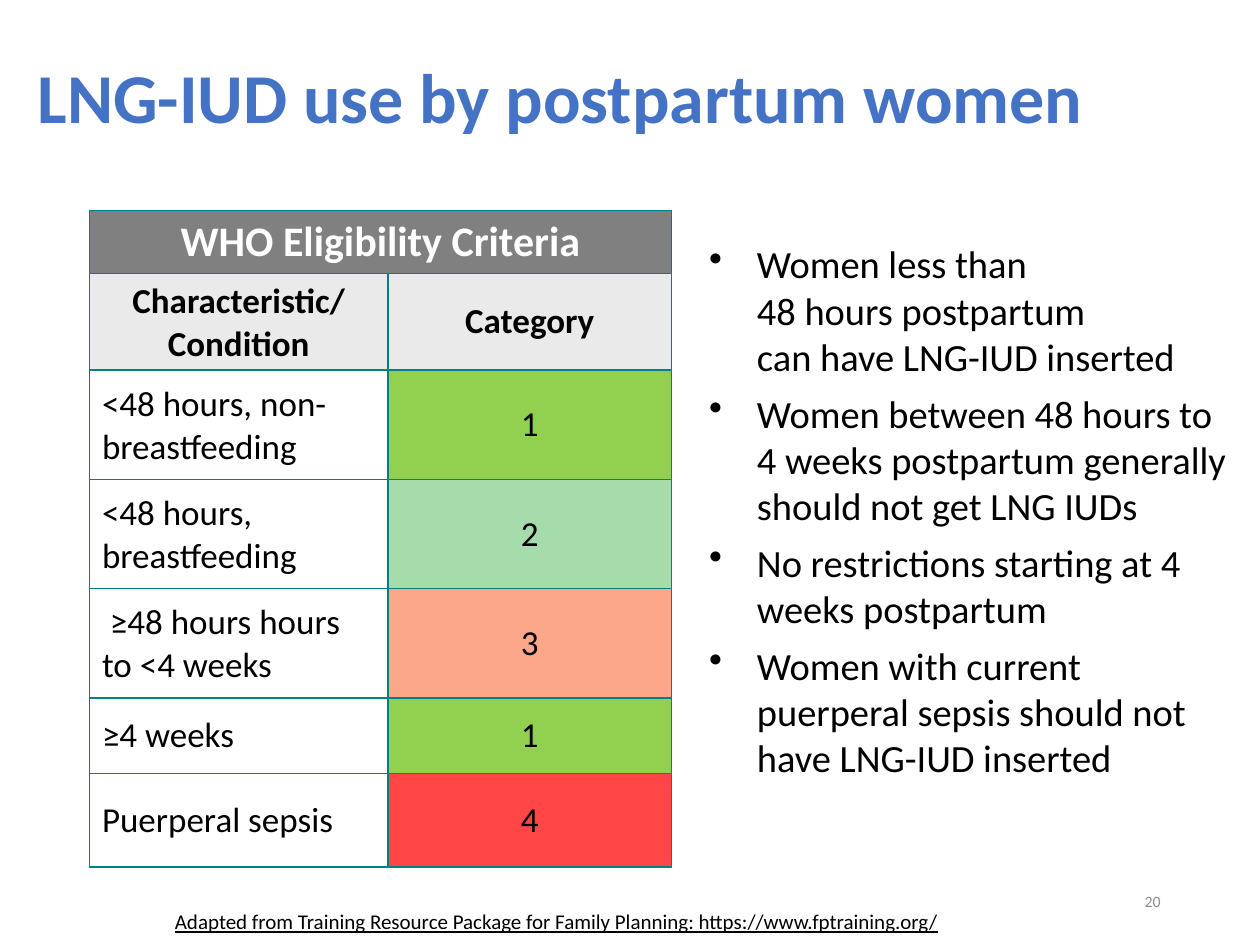
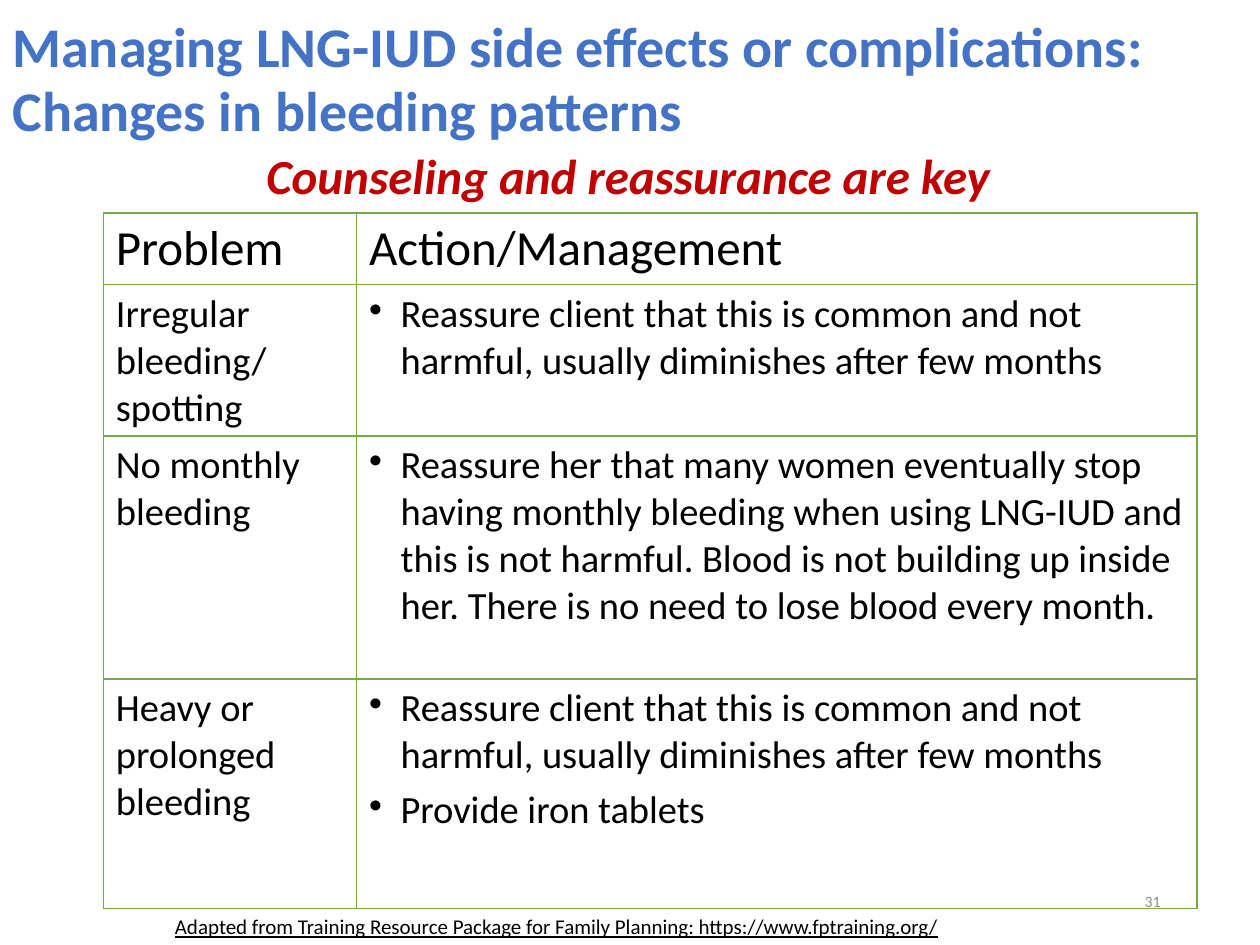
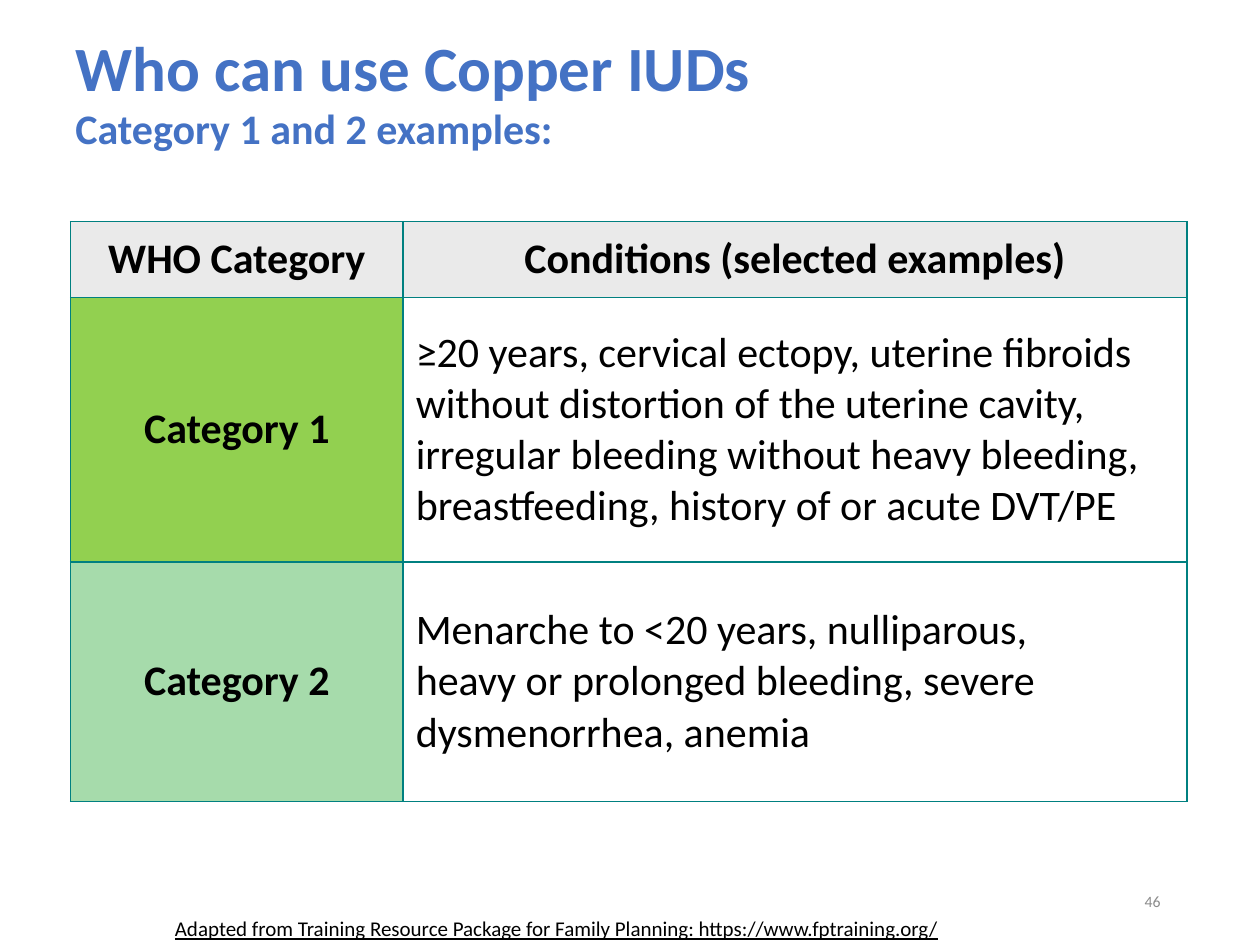
"""Build three slides on IUD eligibility and side effects."""
from collections import namedtuple

from lxml import etree
from pptx import Presentation
from pptx.dml.color import RGBColor
from pptx.enum.text import MSO_ANCHOR, PP_ALIGN
from pptx.oxml.ns import qn
from pptx.util import Pt

PX = 9144
FONT = "Calibri"
LEFT, CENTER, RIGHT = PP_ALIGN.LEFT, PP_ALIGN.CENTER, PP_ALIGN.RIGHT
TOP, MIDDLE = MSO_ANCHOR.TOP, MSO_ANCHOR.MIDDLE

BLACK = RGBColor(0x00, 0x00, 0x00)
WHITE = RGBColor(0xFF, 0xFF, 0xFF)
TITLE_BLUE = RGBColor(0x44, 0x72, 0xC4)
KEY_RED = RGBColor(0xC0, 0x00, 0x00)
NUMBER_GRAY = RGBColor(0x8C, 0x8C, 0x8C)
BANNER_GRAY = RGBColor(0x80, 0x80, 0x80)
HEADER_GRAY = RGBColor(0xEA, 0xEA, 0xEA)
TEAL = RGBColor(0x00, 0x80, 0x80)
GREEN = RGBColor(0x70, 0xAD, 0x47)
CATEGORY_FILLS = {
    "1": RGBColor(0x92, 0xD0, 0x50),
    "2": RGBColor(0xA6, 0xDB, 0xAB),
    "3": RGBColor(0xFC, 0xA7, 0x89),
    "4": RGBColor(0xFF, 0x46, 0x46),
}
SOURCE = "Adapted from Training Resource Package for Family Planning: https://www.fptraining.org/"
REASSURE = "Reassure client that this is common and not harmful, usually diminishes after few months"

Cell = namedtuple("Cell", "lines size fill bold align color hang gap pad",
                  defaults=(None, False, LEFT, BLACK, 0, 0, 5))
Grid = namedtuple("Grid", "left top columns rows border anchor right_pad cells")
Sheet = namedtuple("Sheet", "number source_top title_area title title_size spacing grid")


def write(frame, lines, size, color=BLACK, bold=False, align=LEFT, hang=0, gap=0, spacing=1.0):
    """Fill a text frame with one paragraph per line of text."""
    for index, line in enumerate(lines):
        para = frame.add_paragraph() if index else frame.paragraphs[0]
        para.text = line
        para.alignment = align
        para.line_spacing = spacing
        para.space_before = Pt(gap if index else 0)
        para.font.name = FONT
        para.font.size = Pt(size)
        para.font.bold = bold
        para.font.color.rgb = color
        if hang:
            properties = para._p.get_or_add_pPr()
            properties.set("marL", str(hang * PX))
            properties.set("indent", str(-hang * PX))
            bullet = etree.Element(qn("a:buChar"), char="•")
            properties.find(qn("a:defRPr")).addprevious(bullet)


def add_frame(page, area, anchor=TOP):
    """Add a wrapping text box and return its text frame."""
    box = page.shapes.add_textbox(*[length * PX for length in area])
    box.text_frame.word_wrap = True
    box.text_frame.vertical_anchor = anchor
    return box.text_frame


postpartum_conditions = [
    ("<48 hours, non-breastfeeding", "1"),
    ("<48 hours, breastfeeding", "2"),
    (" ≥48 hours hours to <4 weeks", "3"),
    ("≥4 weeks", "1"),
    ("Puerperal sepsis", "4"),
]
postpartum_cells = [
    [Cell(["WHO Eligibility Criteria"], 24, BANNER_GRAY, True, CENTER, WHITE), None],
    [Cell([label], 20, HEADER_GRAY, True, CENTER)
     for label in ("Characteristic/\nCondition", "Category")],
] + [
    [Cell([condition], 20, pad=10),
     Cell([category], 20, CATEGORY_FILLS[category], align=CENTER, pad=10)]
    for condition, category in postpartum_conditions
]

bleeding_problems = [
    ("Irregular bleeding/ spotting", [REASSURE]),
    ("No monthly bleeding",
     ["Reassure her that many women eventually stop having monthly bleeding when using LNG-IUD "
      "and this is not harmful. Blood is not building up inside her. "
      "There is no need to lose blood every month."]),
    ("Heavy or prolonged bleeding", [REASSURE, "Provide iron tablets"]),
]
bleeding_cells = [[Cell([label], 28) for label in ("Problem", "Action/Management")]] + [
    [Cell([problem], 22), Cell(actions, 22, hang=25, gap=4.4)]
    for problem, actions in bleeding_problems
]

copper_conditions = [
    ("1", "≥20 years, cervical ectopy, uterine fibroids without distortion of the uterine cavity, "
          "irregular bleeding without heavy bleeding, breastfeeding, history of or acute DVT/PE"),
    ("2", "Menarche to <20 years, nulliparous, \n"
          "heavy or prolonged bleeding, severe dysmenorrhea, anemia"),
]
copper_cells = [
    [Cell([label], 24, HEADER_GRAY, True, CENTER)
     for label in ("WHO Category", "Conditions (selected examples)")],
] + [
    [Cell([f"Category {category}"], 24, CATEGORY_FILLS[category], True, CENTER),
     Cell([conditions], 24)]
    for category, conditions in copper_conditions
]

sheets = [
    Sheet(20, 716, (20, 24, 900, 114), ["LNG-IUD use by postpartum women"], 40, 0.85,
          Grid(71, 167, (237, 225), (48, 74, 84, 83, 72, 60, 74), TEAL, MIDDLE, 10,
               postpartum_cells)),
    Sheet(31, 720, (0, 18, 931, 92),
          ["Managing LNG-IUD side effects or complications:\nChanges in bleeding patterns"],
          32, 0.95,
          Grid(82, 169, (201, 667), (57, 120, 193, 182), GREEN, TOP, 5, bleeding_cells)),
    Sheet(46, 722, (50, 23, 900, 103),
          ["Who can use Copper IUDs", "Category 1 and 2 examples:"], 36, 0.95,
          Grid(56, 176, (264, 622), (60, 210, 190), TEAL, MIDDLE, 10, copper_cells)),
]

deck = Presentation()
deck.slide_width = 1000 * PX
deck.slide_height = 750 * PX
pages = []
titles = []

for sheet in sheets:
    page = deck.slides.add_slide(deck.slide_layouts[6])
    pages.append(page)
    title = add_frame(page, sheet.title_area, MIDDLE)
    write(title, sheet.title, sheet.title_size, TITLE_BLUE, True, spacing=sheet.spacing)
    titles.append(title)

    grid = sheet.grid
    table = page.shapes.add_table(
        len(grid.rows), len(grid.columns), grid.left * PX, grid.top * PX,
        sum(grid.columns) * PX, sum(grid.rows) * PX).table
    table.first_row = False
    table.horz_banding = False
    for column, width in zip(table.columns, grid.columns):
        column.width = width * PX
    for row, height, entries in zip(table.rows, grid.rows, grid.cells):
        row.height = height * PX
        for cell, entry in zip(row.cells, entries):
            if entry:
                cell.vertical_anchor = grid.anchor
                cell.margin_left = 10 * PX
                cell.margin_right = grid.right_pad * PX
                cell.margin_top = cell.margin_bottom = entry.pad * PX
                write(cell.text_frame, entry.lines, entry.size, entry.color, entry.bold,
                      entry.align, entry.hang, entry.gap)
            if entry and entry.fill:
                cell.fill.solid()
                cell.fill.fore_color.rgb = entry.fill
            else:
                cell.fill.background()
            properties = cell._tc.get_or_add_tcPr()
            for position, side in enumerate(("lnL", "lnR", "lnT", "lnB")):
                line = etree.Element(qn(f"a:{side}"), w=str(Pt(1)))
                paint = etree.SubElement(line, qn("a:solidFill"))
                etree.SubElement(paint, qn("a:srgbClr"), val=str(grid.border))
                properties.insert(position, line)
    if None in grid.cells[0]:
        table.cell(0, 0).merge(table.cell(0, 1))

    number = add_frame(page, (706, 695, 225, 40), MIDDLE)
    write(number, [str(sheet.number)], 9, NUMBER_GRAY, align=RIGHT)
    source = add_frame(page, (129, sheet.source_top, 694, 27))
    write(source, [SOURCE], 12)
    source.paragraphs[0].font.underline = True

advice = add_frame(pages[0], (553, 186, 433, 550))
write(advice, [
    "Women less than \n48 hours postpartum \ncan have LNG-IUD inserted",
    "Women between 48 hours to 4 weeks postpartum generally should not get LNG IUDs",
    "No restrictions starting at 4 weeks postpartum",
    "Women with current puerperal sepsis should not have LNG-IUD inserted",
], 22, hang=38, gap=6)

key_message = add_frame(pages[1], (50, 114, 897, 55))
write(key_message, ["Counseling and reassurance are key"], 28, KEY_RED, True, CENTER, spacing=0.95)
key_message.paragraphs[0].font.italic = True

titles[2].paragraphs[1].font.size = Pt(24)

deck.save("out.pptx")
